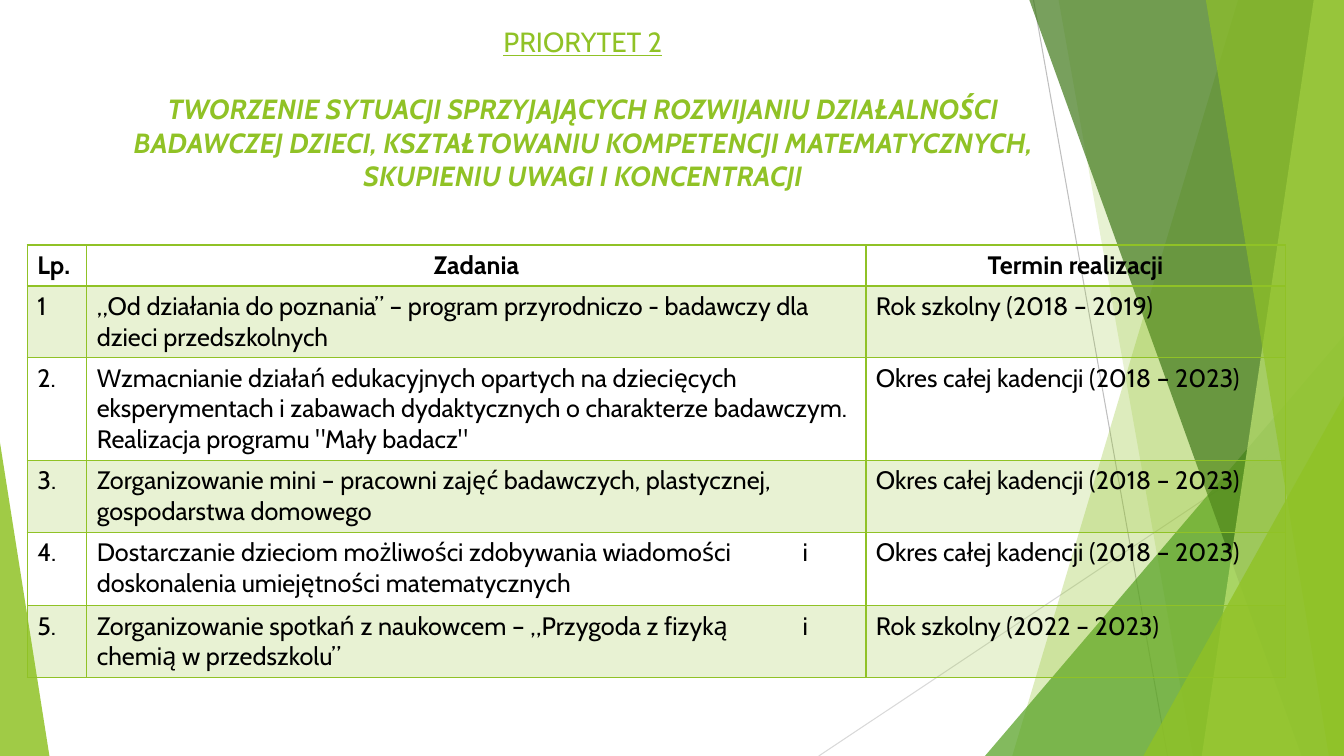
from collections import namedtuple

from lxml.etree import SubElement
from pptx import Presentation
from pptx.dml.color import RGBColor
from pptx.enum.shapes import MSO_CONNECTOR, MSO_SHAPE
from pptx.enum.text import MSO_ANCHOR, PP_ALIGN
from pptx.oxml.ns import qn
from pptx.util import Emu, Inches, Pt

COLORS = {
    "lime": "90C226", "green": "54A021", "forest": "3F7819", "pale": "C0E474",
    "gray": "BFBFBF", "light_gray": "D9D9D9", "black": "000000",
}
FONT = "Cabin"
WIDTH, HEIGHT = Inches(13.33), Inches(7.5)
Box = namedtuple("Box", "left top width height")

TITLE = "PRIORYTET 2"
SUBTITLE = ("TWORZENIE SYTUACJI SPRZYJAJĄCYCH ROZWIJANIU DZIAŁALNOŚCI BADAWCZEJ DZIECI, "
            "KSZTAŁTOWANIU KOMPETENCJI MATEMATYCZNYCH, SKUPIENIU UWAGI I KONCENTRACJI")
WHOLE_TERM = "Okres całej kadencji (2018 – 2023)"
ROWS = [
    ("Lp.", "Zadania", "Termin realizacji"),
    ("1", "„Od działania do poznania” – program przyrodniczo - badawczy dla dzieci "
          "przedszkolnych", "Rok szkolny (2018 – 2019)"),
    ("2.", "Wzmacnianie działań edukacyjnych opartych na dziecięcych eksperymentach i zabawach "
           "dydaktycznych o charakterze badawczym. Realizacja programu \"Mały badacz\"",
     WHOLE_TERM),
    ("3.", "Zorganizowanie mini – pracowni zajęć badawczych, plastycznej, gospodarstwa domowego",
     WHOLE_TERM),
    ("4.", "Dostarczanie dzieciom możliwości zdobywania wiadomości\ti doskonalenia umiejętności "
           "matematycznych", WHOLE_TERM),
    ("5.", "Zorganizowanie spotkań z naukowcem – „Przygoda z fizyką\ti chemią w przedszkolu”",
     "Rok szkolny (2022 – 2023)"),
]
COL_WEIGHTS = [0.59, 7.73, 4.16]
ROW_WEIGHTS = [0.41, 0.71, 1.02, 0.71, 0.73, 0.71]


def area(left, top, width, height):
    """Box given in percent of the slide."""
    return Box(*(Emu(int(share * side / 100)) for share, side in
                 zip((left, top, width, height), (WIDTH, HEIGHT) * 2)))


def point(box, x, y):
    """Point given in percent of a box."""
    return (Emu(int(box.left + box.width * x / 100)),
            Emu(int(box.top + box.height * y / 100)))


def rgb(name):
    return RGBColor.from_string(COLORS[name])


def set_fill(fill, color, alpha):
    fill.solid()
    fill.fore_color.rgb = rgb(color)
    clr = fill._xPr.find(qn("a:solidFill"))[0]
    SubElement(clr, qn("a:alpha"), val=str(alpha * 1000))


def write(p, text, size=18, color="black", bold=False, italic=False, underline=False,
          align=PP_ALIGN.LEFT, before=0):
    p.alignment = align
    if before:
        p.space_before = Pt(before)
    r = p.add_run()
    r.text = text
    f = r.font
    f.name, f.size, f.bold, f.italic, f.underline = FONT, Pt(size), bold, italic, underline
    f.color.rgb = rgb(color)


def add_line(s, start, end, color):
    line = s.shapes.add_connector(MSO_CONNECTOR.STRAIGHT, *start, *end)
    line.line.color.rgb = rgb(color)
    line.line.width = Pt(0.75)
    SubElement(line._element.spPr, qn("a:effectLst"))


def finish(sp, color, alpha):
    sp.shadow.inherit = False
    sp.line.fill.background()
    set_fill(sp.fill, color, alpha)


def add_facet(s, box, top_x, bottom_x, color, alpha):
    """Band from a slanted left edge to the right side of the box."""
    corners = [point(box, x, y) for x, y in
               ((top_x, 0), (100, 0), (100, 100), (bottom_x, 100))]
    builder = s.shapes.build_freeform(*corners[0])
    builder.add_line_segments(corners[1:], close=True)
    finish(builder.convert_to_shape(), color, alpha)


def add_triangle(s, box, left, right, top, apex, color, alpha):
    """Triangle standing on the bottom of the box."""
    x1, y1 = point(box, left, top)
    x2, y2 = point(box, right, 100)
    sp = s.shapes.add_shape(MSO_SHAPE.ISOSCELES_TRIANGLE, x1, y1, x2 - x1, y2 - y1)
    sp.adjustments[0] = apex
    finish(sp, color, alpha)


def draw_backdrop(s, box):
    add_line(s, point(box, 76.9, 0), point(box, 86.87, 100), "gray")
    add_line(s, point(box, 100, 53.73), point(box, 60.92, 100), "light_gray")
    add_facet(s, box, 92.12, 75.32, "lime", 30)
    add_facet(s, box, 78.77, 88.75, "lime", 20)
    add_triangle(s, box, 73.29, 100, 44.4, 1, "green", 72)
    add_facet(s, box, 76.59, 96.85, "forest", 70)
    add_facet(s, box, 97.75, 89.42, "pale", 70)
    add_facet(s, box, 89.72, 98.87, "lime", 65)
    add_triangle(s, box, 85.07, 100, 52.4, 1, "lime", 80)
    add_triangle(s, box, 0, 3.68, 58.53, 0, "lime", 85)


def draw_title(s, box):
    tf = s.shapes.add_textbox(*box).text_frame
    tf.word_wrap = True
    tf.vertical_anchor = MSO_ANCHOR.TOP
    style = dict(size=19.8, color="lime", align=PP_ALIGN.CENTER)
    write(tf.paragraphs[0], TITLE, underline=True, **style)
    write(tf.add_paragraph(), SUBTITLE, bold=True, italic=True, before=24, **style)


def set_borders(cell, **widths):
    tcPr = cell._tc.get_or_add_tcPr()
    for side in ("L", "R", "T", "B"):
        ln = SubElement(tcPr, qn("a:ln" + side), w=str(Pt(widths.get(side, 1))))
        fill = SubElement(ln, qn("a:solidFill"))
        SubElement(fill, qn("a:srgbClr"), val=COLORS["lime"])


def set_tab(p, pos):
    tabs = SubElement(p._p.get_or_add_pPr(), qn("a:tabLst"))
    SubElement(tabs, qn("a:tab"), pos=str(Inches(pos)), algn="l")


def draw_tasks(s, box):
    table = s.shapes.add_table(len(ROWS), len(COL_WEIGHTS), *box).table
    table.first_row = table.horz_banding = False
    for col, weight in zip(table.columns, COL_WEIGHTS):
        col.width = Emu(int(box.width * weight / sum(COL_WEIGHTS)))
    for row, weight in zip(table.rows, ROW_WEIGHTS):
        row.height = Emu(int(box.height * weight / sum(ROW_WEIGHTS)))
    for i, texts in enumerate(ROWS):
        for j, text in enumerate(texts):
            cell = table.cell(i, j)
            set_borders(cell, B=2 if i == 0 else 1, T=2 if i == 1 else 1)
            if i % 2:
                set_fill(cell.fill, "lime", 20)
            else:
                cell.fill.background()
            p = cell.text_frame.paragraphs[0]
            if "\t" in text:
                set_tab(p, 7)
            header = i == 0
            write(p, text, bold=header,
                  align=PP_ALIGN.CENTER if header and j else PP_ALIGN.LEFT)


def main():
    prs = Presentation()
    prs.slide_width, prs.slide_height = WIDTH, HEIGHT
    s = prs.slides.add_slide(prs.slide_layouts[6])
    draw_backdrop(s, area(0, 0, 100, 100))
    draw_title(s, area(8.1, 2.67, 70.52, 25.87))
    draw_tasks(s, area(2.03, 32.4, 93.6, 57.2))
    prs.save("out.pptx")


if __name__ == "__main__":
    main()
